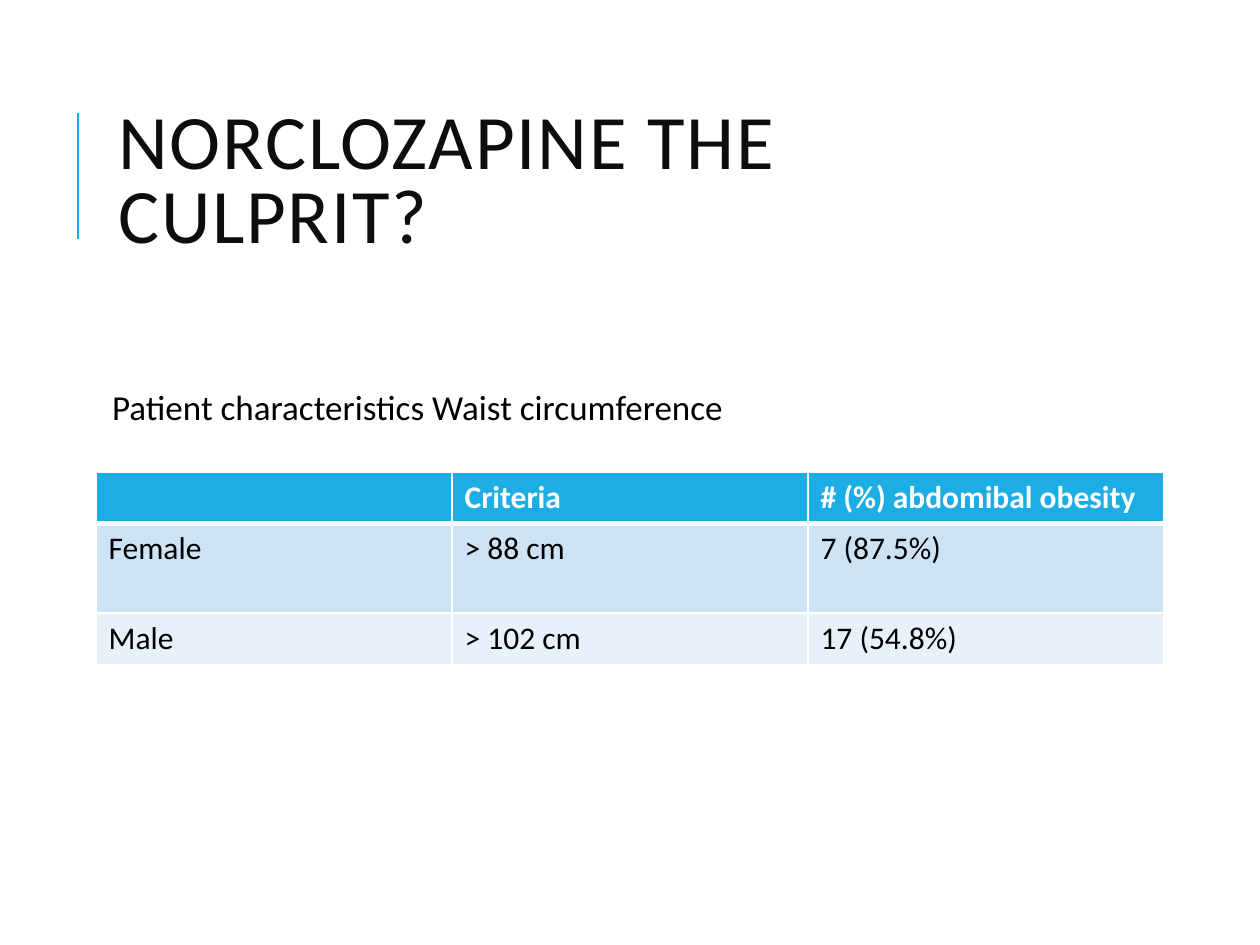
from lxml import etree
from pptx import Presentation
from pptx.dml.color import RGBColor
from pptx.enum import shapes, text
from pptx.oxml import ns
from pptx.util import Pt

ACCENT = RGBColor(0x1C, 0xAD, 0xE4)
TITLE_INK = RGBColor(0x0D, 0x0D, 0x0D)
BLACK = RGBColor(0, 0, 0)
WHITE = RGBColor(0xFF, 0xFF, 0xFF)
BAND_DARK = RGBColor(0xCD, 0xE3, 0xF5)
BAND_LIGHT = RGBColor(0xE8, 0xF1, 0xFA)

TITLE_ONLY = 5
TEXT_LEFT, TEXT_WIDTH = 60.5, 573.8
COLUMN_WIDTH = 203.4
ROW_HEIGHTS = (29.2, 51.2, 29.2)
ROW_FILLS = (ACCENT, BAND_DARK, BAND_LIGHT)
WAIST_ROWS = (
    ("", "Criteria", "# (%) abdomibal obesity"),
    ("Female", "> 88 cm", "7 (87.5%)"),
    ("Male", "> 102 cm", "17 (54.8%)"),
)


def apply(target, values):
    for name, value in values.items():
        setattr(target, name, value)


def format_font(font, size, color, bold=False):
    apply(font, {"name": "Calibri", "size": Pt(size), "bold": bold})
    font.color.rgb = color


def add_title(slide, wording):
    title = slide.shapes.title
    apply(title, {"left": Pt(TEXT_LEFT), "top": Pt(46.1),
                  "width": Pt(TEXT_WIDTH), "height": Pt(118.1)})
    frame = title.text_frame
    apply(frame, {"text": wording, "word_wrap": True,
                  "auto_size": text.MSO_AUTO_SIZE.NONE,
                  "vertical_anchor": text.MSO_ANCHOR.MIDDLE})
    heading = frame.paragraphs[0]
    apply(heading, {"alignment": text.PP_ALIGN.LEFT, "line_spacing": 0.8})
    run = heading.runs[0]
    format_font(run.font, 44, TITLE_INK)
    run.font._element.set("spc", "100")


def add_title_rule(slide):
    rule = slide.shapes.add_connector(
        shapes.MSO_CONNECTOR.STRAIGHT, Pt(44.6), Pt(136.8), Pt(44.6), Pt(64.8))
    rule.line.color.rgb = ACCENT
    rule.line.width = Pt(1.5)
    etree.SubElement(rule._element.spPr, ns.qn("a:effectLst"))


def add_caption(slide, wording):
    box = slide.shapes.add_textbox(
        Pt(TEXT_LEFT), Pt(180), Pt(TEXT_WIDTH), Pt(316.8))
    frame = box.text_frame
    apply(frame, {"text": wording, "word_wrap": True, "margin_left": Pt(3.6),
                  "margin_right": Pt(3.6), "margin_top": Pt(42.8),
                  "margin_bottom": Pt(3.6)})
    caption = frame.paragraphs[0]
    caption.line_spacing = 0.9
    format_font(caption.runs[0].font, 20, BLACK)


def set_borders(cell, widths):
    """Draw white cell borders; widths maps L, R, T and B to points."""
    properties = cell._tc.get_or_add_tcPr()
    for index, (side, width) in enumerate(widths.items()):
        border = etree.Element(ns.qn(f"a:ln{side}"), w=str(Pt(width)))
        fill = etree.SubElement(border, ns.qn("a:solidFill"))
        etree.SubElement(fill, ns.qn("a:srgbClr"), val=str(WHITE))
        properties.insert(index, border)


def add_waist_table(slide):
    columns = len(WAIST_ROWS[0])
    table = slide.shapes.add_table(
        len(WAIST_ROWS), columns, Pt(54.9), Pt(270),
        Pt(COLUMN_WIDTH * columns), Pt(sum(ROW_HEIGHTS))).table
    for column in table.columns:
        column.width = Pt(COLUMN_WIDTH)
    for index, values in enumerate(WAIST_ROWS):
        table.rows[index].height = Pt(ROW_HEIGHTS[index])
        header = index == 0
        for column, value in enumerate(values):
            cell = table.cell(index, column)
            cell.text = value
            format_font(cell.text_frame.paragraphs[0].font, 18,
                        WHITE if header else BLACK, header)
            cell.fill.solid()
            cell.fill.fore_color.rgb = ROW_FILLS[index]
            set_borders(cell, {"L": 1, "R": 1, "T": 3 if index == 1 else 1,
                               "B": 3 if header else 1})


def main():
    deck = Presentation()
    apply(deck, {"slide_width": Pt(720), "slide_height": Pt(540)})
    slide = deck.slides.add_slide(deck.slide_layouts[TITLE_ONLY])
    add_title_rule(slide)
    add_title(slide, "NORCLOZAPINE THE CULPRIT?")
    add_caption(slide, "Patient characteristics Waist circumference")
    add_waist_table(slide)
    deck.save("out.pptx")


if __name__ == "__main__":
    main()
